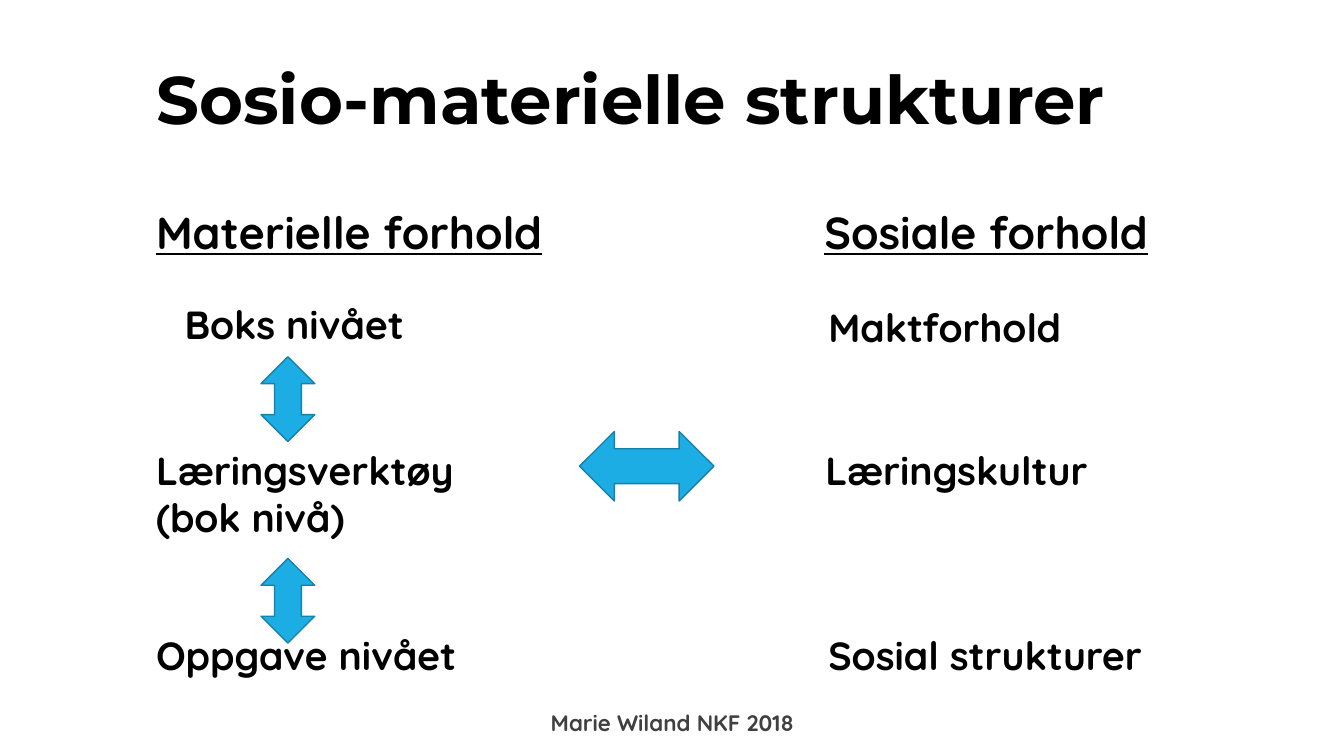
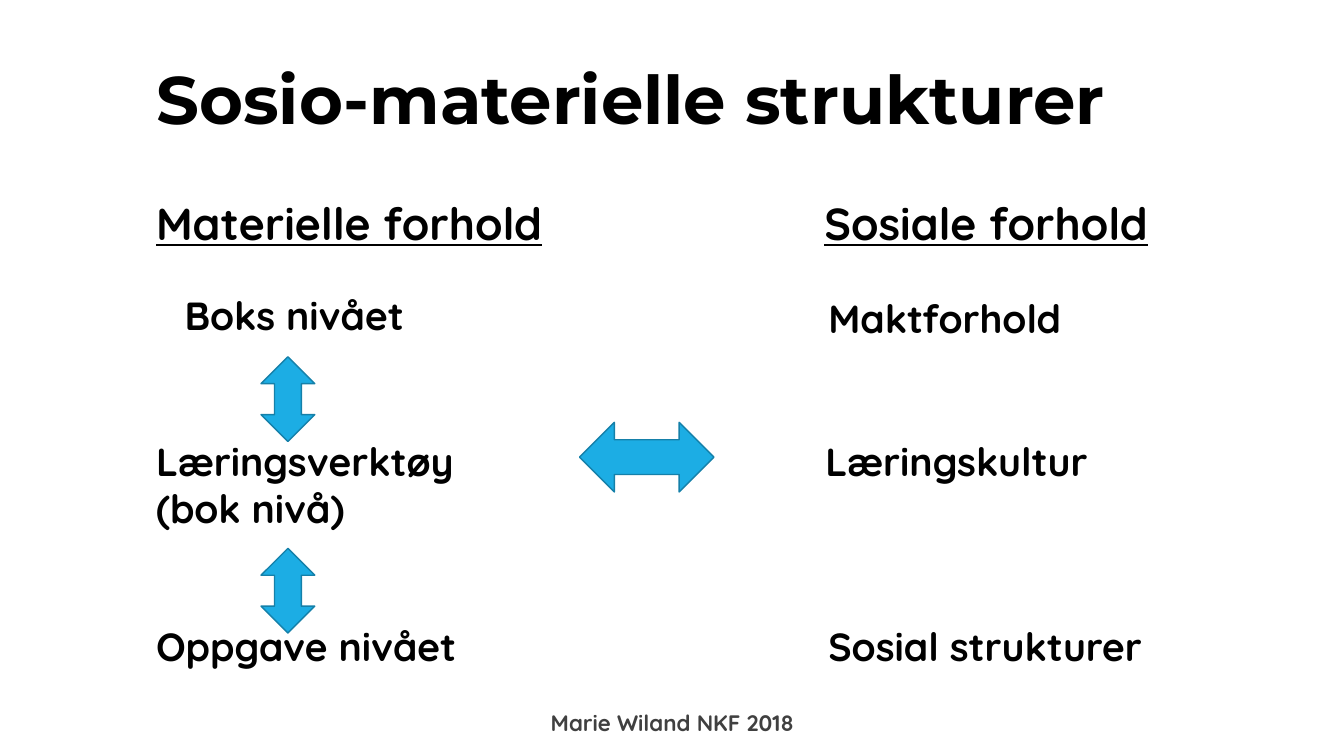
import dataclasses

import pptx
import pptx.dml.color
import pptx.enum.shapes
import pptx.enum.text
import pptx.util

Color = pptx.dml.color.RGBColor
Shape = pptx.enum.shapes.MSO_SHAPE
Align = pptx.enum.text.PP_ALIGN
Anchor = pptx.enum.text.MSO_ANCHOR
AutoSize = pptx.enum.text.MSO_AUTO_SIZE


@dataclasses.dataclass(frozen=True)
class Theme:
    title_font: str = "Montserrat"
    body_font: str = "Quicksand"
    text: str = "000000"
    footer: str = "404040"
    arrow: str = "1CADE4"
    arrow_line: str = "1580A9"
    background: str = "FFFFFF"
    title_size: int = 48
    heading_size: int = 32
    label_size: int = 28
    footer_size: int = 16
    line_width: int = 1


class Deck:
    columns = 40
    rows = 30
    title_only = 5

    def __init__(self, theme):
        self.theme = theme
        self.presentation = pptx.Presentation()
        self.presentation.slide_width = pptx.util.Inches(13.33)
        self.presentation.slide_height = pptx.util.Inches(7.5)
        self.page = None

    def place(self, column, row, width, height):
        across = self.presentation.slide_width / self.columns
        down = self.presentation.slide_height / self.rows
        return [round(length) for length in
                (column * across, row * down, width * across, height * down)]

    def set_text(self, frame, text, size, font, color, align=Align.LEFT, underline=False):
        frame.word_wrap = True
        frame.text = text
        for para in frame.paragraphs:
            para.alignment = align
            para.font.size = pptx.util.Pt(size)
            para.font.name = font
            para.font.bold = True
            para.font.underline = underline
            para.font.color.rgb = Color.from_string(color)

    def add_page(self, title):
        layout = self.presentation.slide_layouts[self.title_only]
        self.page = self.presentation.slides.add_slide(layout)
        fill = self.page.background.fill
        fill.solid()
        fill.fore_color.rgb = Color.from_string(self.theme.background)
        box = self.page.shapes.title
        box.left, box.top, box.width, box.height = self.place(4.35, 1.72, 33, 4.72)
        frame = box.text_frame
        self.set_text(frame, title, self.theme.title_size, self.theme.title_font, self.theme.text)
        frame.auto_size = AutoSize.NONE
        frame.vertical_anchor = Anchor.MIDDLE
        frame.paragraphs[0].line_spacing = 0.9

    def add_text(self, text, area, size, color, **style):
        frame = self.page.shapes.add_textbox(*self.place(*area)).text_frame
        self.set_text(frame, text, size, self.theme.body_font, color, **style)
        return frame

    def add_heading(self, text, column, row, width):
        self.add_text(text, (column, row, width, 3.32), self.theme.heading_size,
                      self.theme.text, underline=True)

    def add_label(self, text, column, row, height=3):
        self.add_text(text, (column, row, 10.68, height), self.theme.label_size,
                      self.theme.text)

    def add_arrow(self, kind, column, row, width, height):
        arrow = self.page.shapes.add_shape(kind, *self.place(column, row, width, height))
        arrow.shadow.inherit = False
        arrow.fill.solid()
        arrow.fill.fore_color.rgb = Color.from_string(self.theme.arrow)
        arrow.line.color.rgb = Color.from_string(self.theme.arrow_line)
        arrow.line.width = pptx.util.Pt(self.theme.line_width)

    def add_footer(self, text):
        frame = self.add_text(text, (11.46, 28.2, 17.1, 1.2), self.theme.footer_size,
                              self.theme.footer, align=Align.CENTER)
        frame.vertical_anchor = Anchor.BOTTOM


def add_structures_page(deck, heading_row, lower_arrow_row):
    deck.add_page("Sosio-materielle strukturer")

    deck.add_heading("Materielle forhold", 4.35, heading_row, 12.36)
    deck.add_label("Boks nivået", 5.2, heading_row + 3.8)
    deck.add_label("Læringsverktøy\n(bok nivå)", 4.35, heading_row + 9.6, 5.44)
    deck.add_label("Oppgave nivået", 4.35, heading_row + 16.92)

    deck.add_heading("Sosiale forhold", 24.24, heading_row, 10.68)
    deck.add_label("Maktforhold", 24.36, heading_row + 3.92)
    deck.add_label("Læringskultur", 24.27, heading_row + 9.6, 2.28)
    deck.add_label("Sosial strukturer", 24.36, heading_row + 16.92)

    deck.add_arrow(Shape.LEFT_RIGHT_ARROW, 17.25, heading_row + 9.2, 4, 2.76)
    for arrow_row in (14.16, lower_arrow_row):
        deck.add_arrow(Shape.UP_DOWN_ARROW, 7.77, arrow_row, 1.6, 3.36)

    deck.add_footer("Marie Wiland NKF 2018")


def main():
    deck = Deck(Theme())
    for heading_row, lower_arrow_row in ((7.92, 22.16), (7.56, 21.76)):
        add_structures_page(deck, heading_row, lower_arrow_row)
    deck.presentation.save("out.pptx")


if __name__ == "__main__":
    main()
